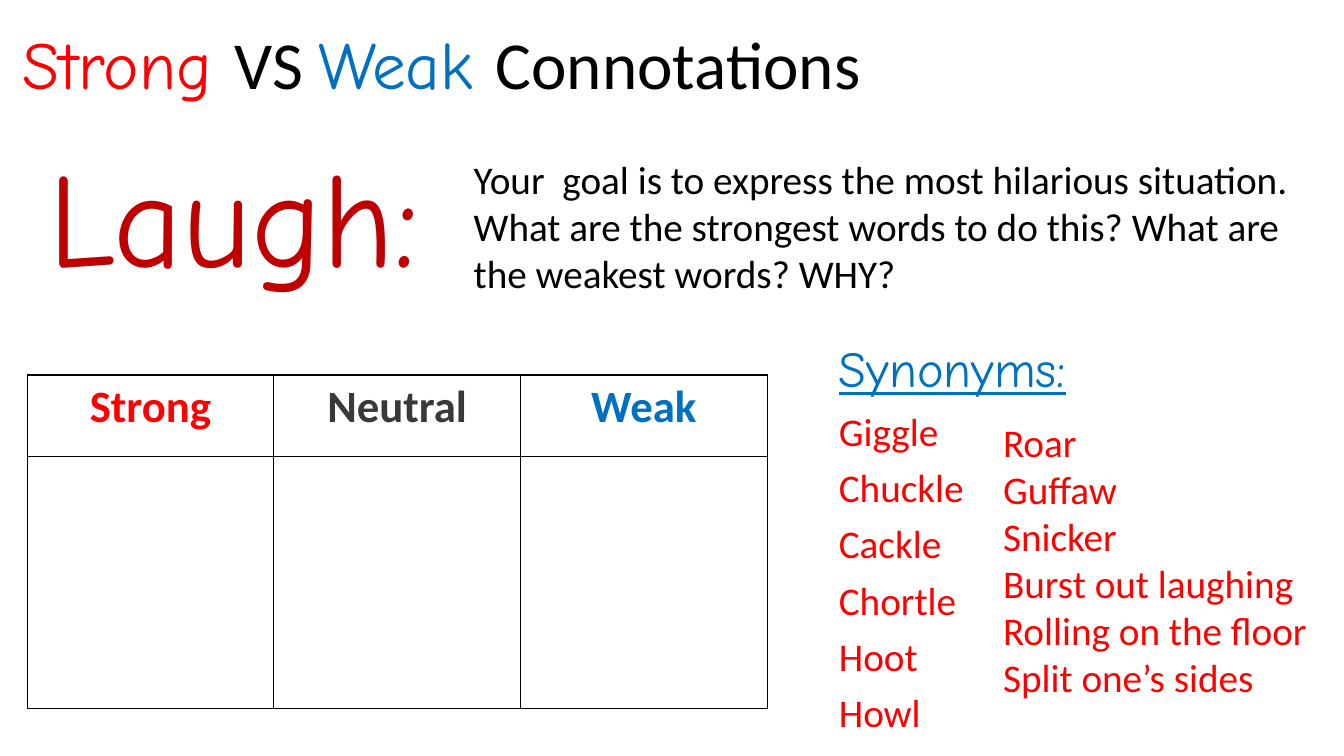
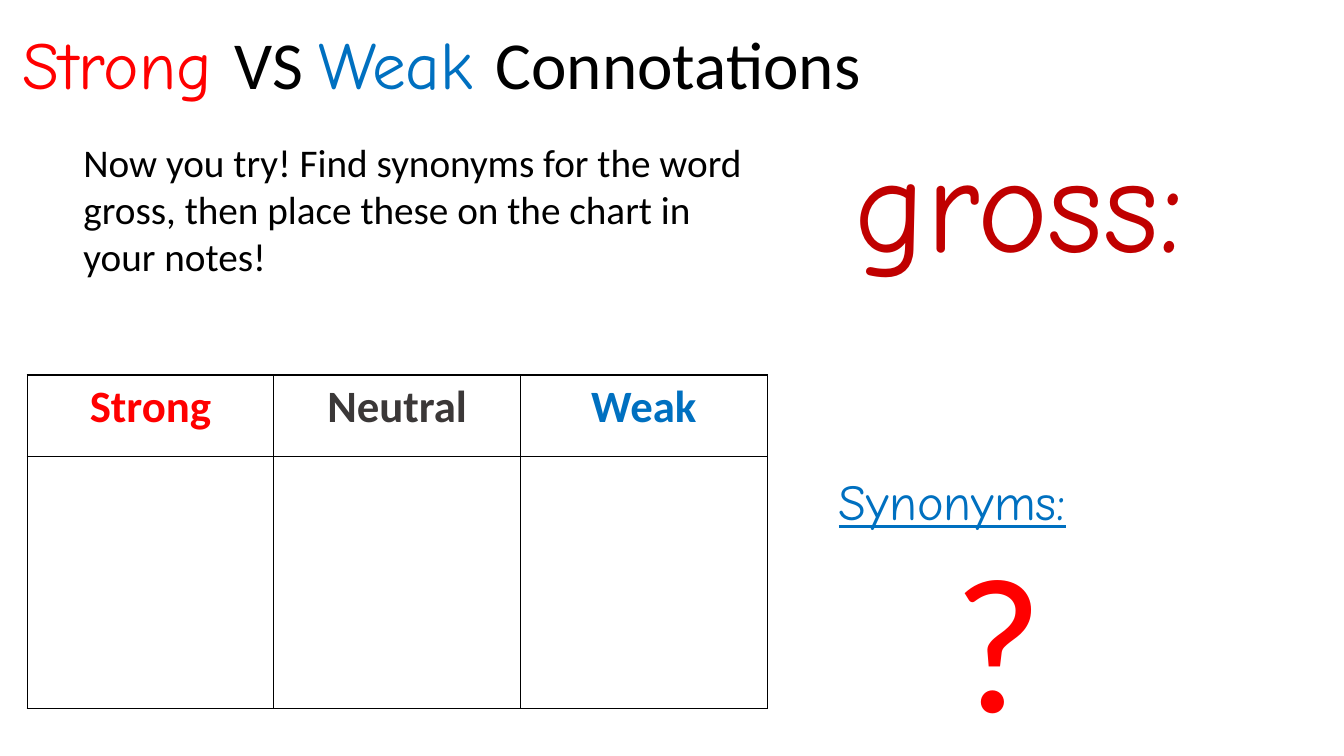
from pptx import Presentation
from pptx.dml.color import RGBColor
from pptx.enum.text import MSO_ANCHOR as Anchor, MSO_AUTO_SIZE as Fit, PP_ALIGN as Align
from pptx.oxml import parse_xml
from pptx.oxml.ns import nsdecls
from pptx.util import Inches, Pt

RED, BLUE, DARK = "FF0000", "0070C0", "C00000"
BLACK, GRAY = "000000", "3B3838"
SANS, COMIC = "Calibri", "Comic Neue"


def paint(font, color):
    font.color.rgb = RGBColor.from_string(color)


class Deck:
    """Holds the shared style and the current slide."""

    def __init__(self):
        self.prs = Presentation()
        self.prs.slide_width = Inches(13.33)
        self.prs.slide_height = Inches(7.5)
        self.slide = None

    def style(self, para, size, color, face=SANS, bold=False, line=False, align=Align.LEFT):
        para.alignment = align
        font = para.font
        font.size, font.name, font.bold, font.underline = Pt(size), face, bold, line
        paint(font, color)

    def place(self, shape, box):
        shape.left, shape.top, shape.width, shape.height = map(Inches, box)
        frame = shape.text_frame
        frame.word_wrap, frame.auto_size = True, Fit.NONE
        return frame

    # Slide with its banner and sorting chart
    def page(self):
        self.slide = self.prs.slides.add_slide(self.prs.slide_layouts[1])
        self.banner()
        self.chart()

    def banner(self):
        box = self.slide.shapes.add_textbox(0, 0, 0, 0)
        para = self.place(box, (0.12, 0.17, 12.52, 0.91)).paragraphs[0]
        self.style(para, 48, BLACK)
        parts = (("Strong ", COMIC, RED), ("VS ", SANS, BLACK),
                 ("Weak ", COMIC, BLUE), ("Connotations", SANS, BLACK))
        for text, face, color in parts:
            run = para.add_run()
            run.text, run.font.name = text, face
            paint(run.font, color)

    def chart(self):
        heads = (("Strong", RED), ("Neutral", GRAY), ("Weak", BLUE))
        box = map(Inches, (0.27, 3.72, 7.34, 3.31))
        table = self.slide.shapes.add_table(2, len(heads), *box).table
        table.first_row = table.horz_banding = False
        for row, tall in zip(table.rows, (0.81, 2.5)):
            row.height = Inches(tall)
        for cell in table.iter_cells():
            cell.fill.background()
            self.border(cell)
        for col, (text, color) in enumerate(heads):
            para = table.cell(0, col).text_frame.paragraphs[0]
            para.text = text
            self.style(para, 32, color, bold=True, align=Align.CENTER)

    def border(self, cell):
        props = cell._tc.get_or_add_tcPr()
        for spot, side in enumerate("LRTB"):
            props.insert(spot, parse_xml(
                f'<a:ln{side} {nsdecls("a")} w="{Pt(1)}"><a:solidFill>'
                f'<a:srgbClr val="{BLACK}"/></a:solidFill></a:ln{side}>'))

    # Large key word in the title placeholder
    def word(self, text, box):
        frame = self.place(self.slide.shapes.title, box)
        frame.vertical_anchor = Anchor.MIDDLE
        para = frame.paragraphs[0]
        para.text, para.line_spacing = text, 0.9
        self.style(para, 96, DARK, COMIC)

    # Heading and entries in the body placeholder
    def list(self, items, top, size=28, align=Align.LEFT):
        box = (8.22, top, 3.37, 7.5 - top)
        frame = self.place(self.slide.placeholders[1], box)
        frame.text = "\n".join(["Synonyms:", *items])
        for spot, para in enumerate(frame.paragraphs):
            props = para._p.get_or_add_pPr()
            props.set("marL", "0")
            props.set("indent", "0")
            props.append(parse_xml(f'<a:buNone {nsdecls("a")}/>'))
            para.line_spacing = 0.9
            para.space_before = Pt(10 if spot else 0)
            if spot:
                self.style(para, size, RED, align=align)
            else:
                self.style(para, 36, BLUE, COMIC, line=True)

    # Plain text box, one paragraph per line
    def note(self, text, box, color=BLACK):
        frame = self.place(self.slide.shapes.add_textbox(0, 0, 0, 0), box)
        frame.text = text
        for para in frame.paragraphs:
            self.style(para, 28, color)


def main():
    deck = Deck()

    # Worked example
    deck.page()
    deck.word("Laugh:", (0.38, 1.5, 11.5, 1.45))
    deck.list(("Giggle", "Chuckle", "Cackle", "Chortle", "Hoot", "Howl"), 3.36)
    more = ("Roar", "Guffaw", "Snicker", "Burst out laughing",
            "Rolling on the floor", "Split one’s sides")
    deck.note("\n".join(more), (9.85, 4.1, 3.48, 2.93), RED)
    deck.note("Your  goal is to express the most hilarious situation. "
              "What are the strongest words to do this? "
              "What are the weakest words? WHY?", (4.6, 1.49, 8.53, 1.51))

    # Student practice
    deck.page()
    deck.word("gross:", (8.38, 1.35, 4.26, 1.45))
    deck.list(("?",), 4.68, 138, Align.CENTER)
    deck.note("Now you try! Find synonyms for the word gross, "
              "then place these on the chart in your notes!", (0.73, 1.32, 6.96, 1.51))

    deck.prs.save("out.pptx")


if __name__ == "__main__":
    main()
